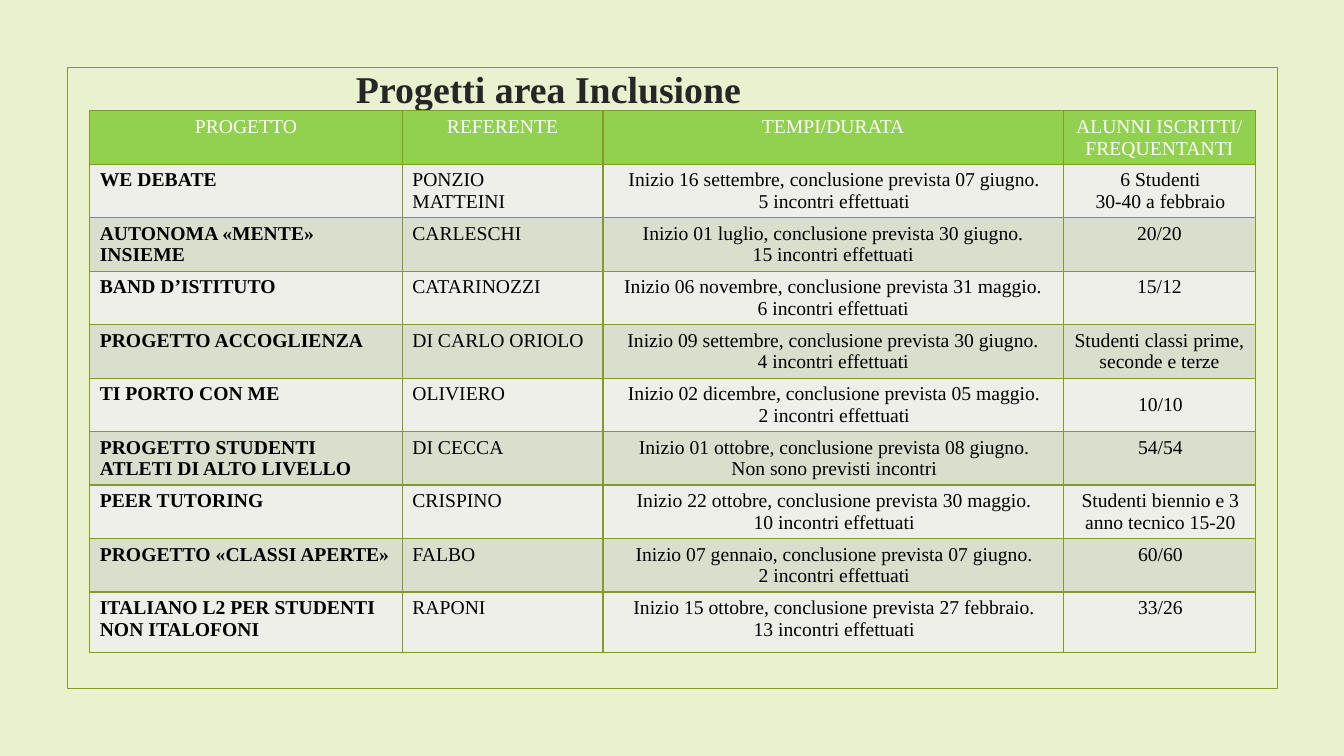
from lxml.etree import SubElement
from pptx import Presentation
from pptx.dml.color import RGBColor
from pptx.enum.shapes import MSO_SHAPE as SHAPE
from pptx.enum.text import MSO_ANCHOR as ANCHOR, PP_ALIGN as ALIGN
from pptx.oxml.ns import qn
from pptx.util import Inches, Pt

FONT = "Times New Roman"
BACKGROUND = RGBColor(0xEA, 0xF1, 0xCE)
OLIVE = RGBColor(0x83, 0x99, 0x2A)
GREEN = RGBColor(0x92, 0xD0, 0x50)
BANDS = [RGBColor(0xD9, 0xDE, 0xCD), RGBColor(0xED, 0xEF, 0xE8)]
DARK = RGBColor(0x26, 0x26, 0x26)
BLACK = RGBColor(0, 0, 0)
WHITE = RGBColor(255, 255, 255)

COLUMNS = [3.1, 1.99, 4.57, 1.9]
ROW_HEIGHT, LAST_HEIGHT = 0.53, 0.6
NARROW_ROWS = {1, 5, 6, 7, 8, 9}
MIDDLE_ROWS = {1, 5}

HEADER = ["PROGETTO", "REFERENTE", "TEMPI/DURATA", "ALUNNI ISCRITTI/\nFREQUENTANTI"]
PROJECTS = [
    ["WE DEBATE", "PONZIO\nMATTEINI",
     "Inizio 16 settembre, conclusione prevista 07 giugno.\n5 incontri effettuati",
     "6 Studenti\n30-40 a febbraio"],
    ["AUTONOMA «MENTE» INSIEME", "CARLESCHI",
     "Inizio 01 luglio, conclusione prevista 30 giugno.\n15 incontri effettuati",
     "20/20"],
    ["BAND D’ISTITUTO", "CATARINOZZI",
     "Inizio 06 novembre, conclusione prevista 31 maggio.\n6 incontri effettuati",
     "15/12"],
    ["PROGETTO ACCOGLIENZA", "DI CARLO ORIOLO",
     "Inizio 09 settembre, conclusione prevista 30 giugno.\n4 incontri effettuati",
     "Studenti classi prime, seconde e terze"],
    ["TI PORTO CON ME", "OLIVIERO",
     "Inizio 02 dicembre, conclusione prevista 05 maggio.\n2 incontri effettuati",
     "10/10"],
    ["PROGETTO STUDENTI ATLETI DI ALTO LIVELLO", "DI CECCA",
     "Inizio 01 ottobre, conclusione prevista 08 giugno.\nNon sono previsti incontri",
     "54/54"],
    ["PEER TUTORING", "CRISPINO",
     "Inizio 22 ottobre, conclusione prevista 30 maggio.\n10 incontri effettuati",
     "Studenti biennio e 3 anno tecnico 15-20"],
    ["PROGETTO «CLASSI APERTE»", "FALBO",
     "Inizio 07 gennaio, conclusione prevista 07 giugno.\n2 incontri effettuati",
     "60/60"],
    ["ITALIANO L2 PER STUDENTI NON ITALOFONI", "RAPONI",
     "Inizio 15 ottobre, conclusione prevista 27 febbraio.\n13 incontri effettuati",
     "33/26"],
]


def write(tf, text, size=14, color=BLACK, bold=False, align=ALIGN.LEFT):
    tf.word_wrap = True
    for i, line in enumerate(text.split("\n")):
        p = tf.paragraphs[0] if i == 0 else tf.add_paragraph()
        p.alignment = align
        r = p.add_run()
        r.text = line
        r.font.name, r.font.size = FONT, Pt(size)
        r.font.bold, r.font.color.rgb = bold, color


class Deck:
    def __init__(self, prs):
        self.s = prs.slides.add_slide(prs.slide_layouts[5])
        fill = self.s.background.fill
        fill.solid()
        fill.fore_color.rgb = BACKGROUND

    def frame(self, x, y, w, h):
        sp = self.s.shapes.add_shape(SHAPE.RECTANGLE, Inches(x), Inches(y), Inches(w), Inches(h))
        sp.shadow.inherit = False
        sp.fill.background()
        sp.line.color.rgb, sp.line.width = OLIVE, Pt(1.25)

    def title(self, text, x, y, w, h):
        sp = self.s.shapes.title
        sp.left, sp.top, sp.width, sp.height = Inches(x), Inches(y), Inches(w), Inches(h)
        sp.text_frame.vertical_anchor = ANCHOR.MIDDLE
        write(sp.text_frame, text, size=27, color=DARK, bold=True, align=ALIGN.CENTER)

    def borders(self, cell):
        tc_pr = cell._tc.get_or_add_tcPr()
        for side in ("lnL", "lnR", "lnT", "lnB"):
            ln = SubElement(tc_pr, qn(f"a:{side}"), w=str(Pt(1)))
            SubElement(SubElement(ln, qn("a:solidFill")), qn("a:srgbClr"), val=str(OLIVE))

    def cell(self, cell, text, row, col):
        header = row == 0
        self.borders(cell)
        cell.fill.solid()
        cell.fill.fore_color.rgb = GREEN if header else BANDS[row % 2]
        if col >= 2 and row in NARROW_ROWS:
            cell.margin_left, cell.margin_right = Inches(0.04), Inches(0.02)
            if row in MIDDLE_ROWS:
                cell.vertical_anchor = ANCHOR.MIDDLE
        write(cell.text_frame, text, color=WHITE if header else BLACK,
              bold=col == 0 and not header,
              align=ALIGN.CENTER if header or col >= 2 else ALIGN.LEFT)

    def table(self, rows, x, y):
        heights = [ROW_HEIGHT] * (len(rows) - 1) + [LAST_HEIGHT]
        table = self.s.shapes.add_table(len(rows), len(COLUMNS), Inches(x), Inches(y),
                                        Inches(sum(COLUMNS)), Inches(sum(heights))).table
        table.first_row = table.horz_banding = False
        for column, width in zip(table.columns, COLUMNS):
            column.width = Inches(width)
        for i, (texts, height) in enumerate(zip(rows, heights)):
            table.rows[i].height = Inches(height)
            for j, text in enumerate(texts):
                self.cell(table.cell(i, j), text, i, j)


def main():
    prs = Presentation()
    prs.slide_width, prs.slide_height = Inches(13.33), Inches(7.5)
    deck = Deck(prs)
    deck.frame(0.67, 0.67, 12, 6.16)
    deck.title("Progetti area Inclusione", 0.74, 0.63, 9.4, 0.49)
    deck.table([HEADER] + PROJECTS, 0.89, 1.1)
    prs.save("out.pptx")


if __name__ == "__main__":
    main()
